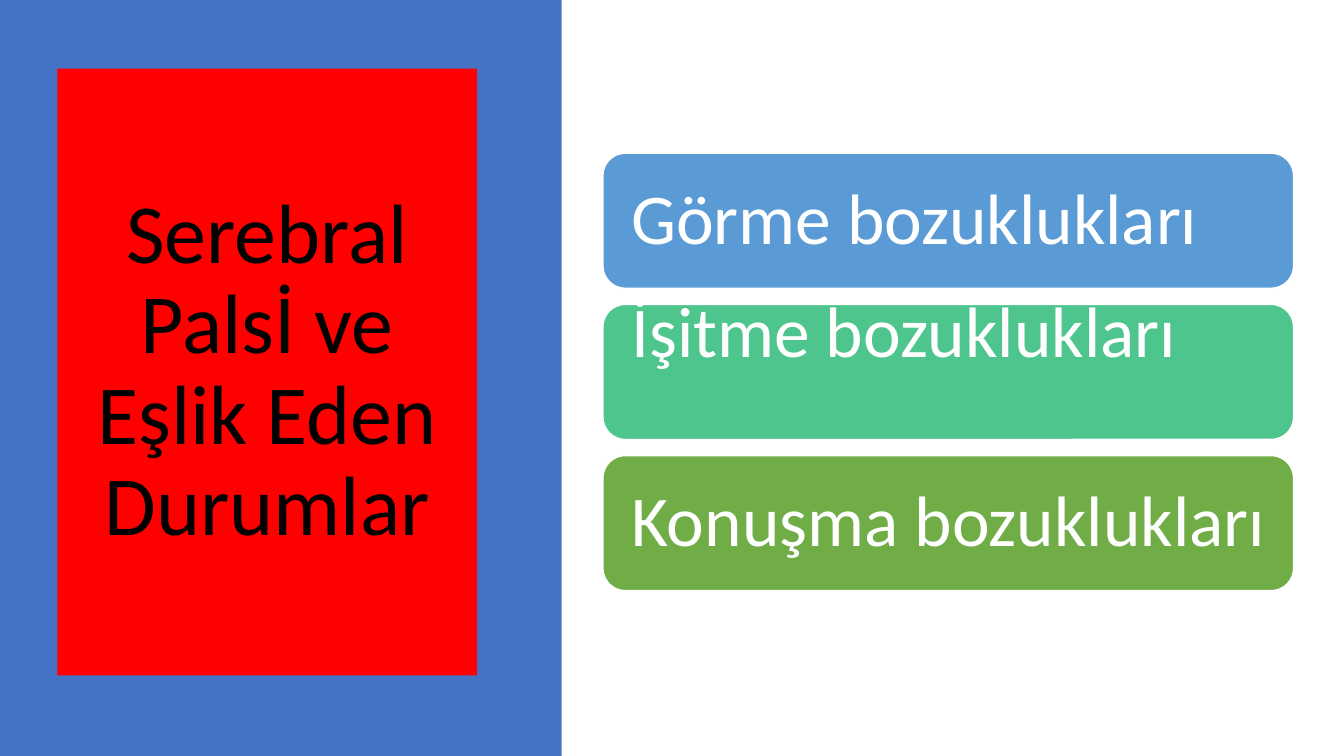
from dataclasses import dataclass

from pptx import Presentation
from pptx.dml.color import RGBColor as Rgb
from pptx.enum.shapes import MSO_SHAPE as Shape
from pptx.enum.text import MSO_ANCHOR as Anchor, PP_ALIGN as Align
from pptx.util import Inches, Pt


@dataclass(frozen=True)
class Theme:
    font: str = "Calibri"
    panel: str = "4472C4"
    title: str = "FF0000"
    ink: str = "000000"
    light: str = "FFFFFF"
    head: int = 60
    body: int = 51


THEME = Theme()
TITLE = "Serebral Palsİ ve Eşlik Eden Durumlar"
# Label, card fill, upward shift of the label
CARDS = [
    ("Görme bozuklukları", "5B9BD5", 0),
    ("İşitme bozuklukları", "4DC58D", 0.38),
    ("Konuşma bozuklukları", "70AD47", 0),
]


def apply(obj, values):
    for name, value in values.items():
        setattr(obj, name, value)


def place(shape, box):
    names = ("left", "top", "width", "height")
    apply(shape, dict(zip(names, map(Inches, box))))


def paint(shape, color):
    shape.fill.solid()
    shape.fill.fore_color.rgb = Rgb.from_string(color)


def write(shape, text, size, color, align, pad):
    frame = shape.text_frame
    frame.text = text
    apply(frame, {
        "word_wrap": True, "vertical_anchor": Anchor.MIDDLE,
        "margin_left": Inches(pad), "margin_right": Inches(pad / 2),
        "margin_top": 0, "margin_bottom": 0,
    })
    para = frame.paragraphs[0]
    apply(para, {"alignment": align, "line_spacing": 0.9})
    font = para.runs[0].font
    apply(font, {"name": THEME.font, "size": Pt(size), "bold": False})
    font.color.rgb = Rgb.from_string(color)


def add_block(slide, kind, box, color):
    block = slide.shapes.add_shape(kind, *map(Inches, box))
    block.shadow.inherit = False
    paint(block, color)
    block.line.fill.background()
    return block


def add_panel(slide, box):
    """Draw the side panel and set the title inside it."""
    left, top, width, height = box
    panel = add_block(slide, Shape.RECTANGLE, box, THEME.panel)
    title = slide.shapes.title
    panel._element.addnext(title._element)
    place(title, (left + 0.57, top + 0.68, width - 1.41, height - 1.48))
    paint(title, THEME.title)
    write(title, TITLE, THEME.head, THEME.ink, Align.CENTER, 0.1)
    title.text_frame.margin_right = Inches(0.1)


def add_cards(slide, box, gap=0.16):
    """Stack the cards evenly down the box."""
    left, top, width, height = box
    pitch = (height + gap) / len(CARDS)
    tall = pitch - gap
    for row, (text, color, lift) in enumerate(CARDS):
        y = top + row * pitch
        card = add_block(slide, Shape.ROUNDED_RECTANGLE,
                         (left, y, width, tall), color)
        card.line.color.rgb = Rgb.from_string(THEME.light)
        card.line.width = Pt(1)
        area = (left + 0.07, y + 0.07 - lift, width - 0.13, tall - 0.13)
        label = slide.shapes.add_textbox(*map(Inches, area))
        write(label, text, THEME.body, THEME.light, Align.LEFT, 0.21)


def main():
    deck = Presentation()
    apply(deck, {"slide_width": Inches(13.33), "slide_height": Inches(7.5)})
    slide = deck.slides.add_slide(deck.slide_layouts.get_by_name("Title Only"))
    add_panel(slide, (0, 0, 5.57, 7.5))
    add_cards(slide, (5.98, 1.52, 6.85, 4.34))
    deck.save("out.pptx")


if __name__ == "__main__":
    main()
